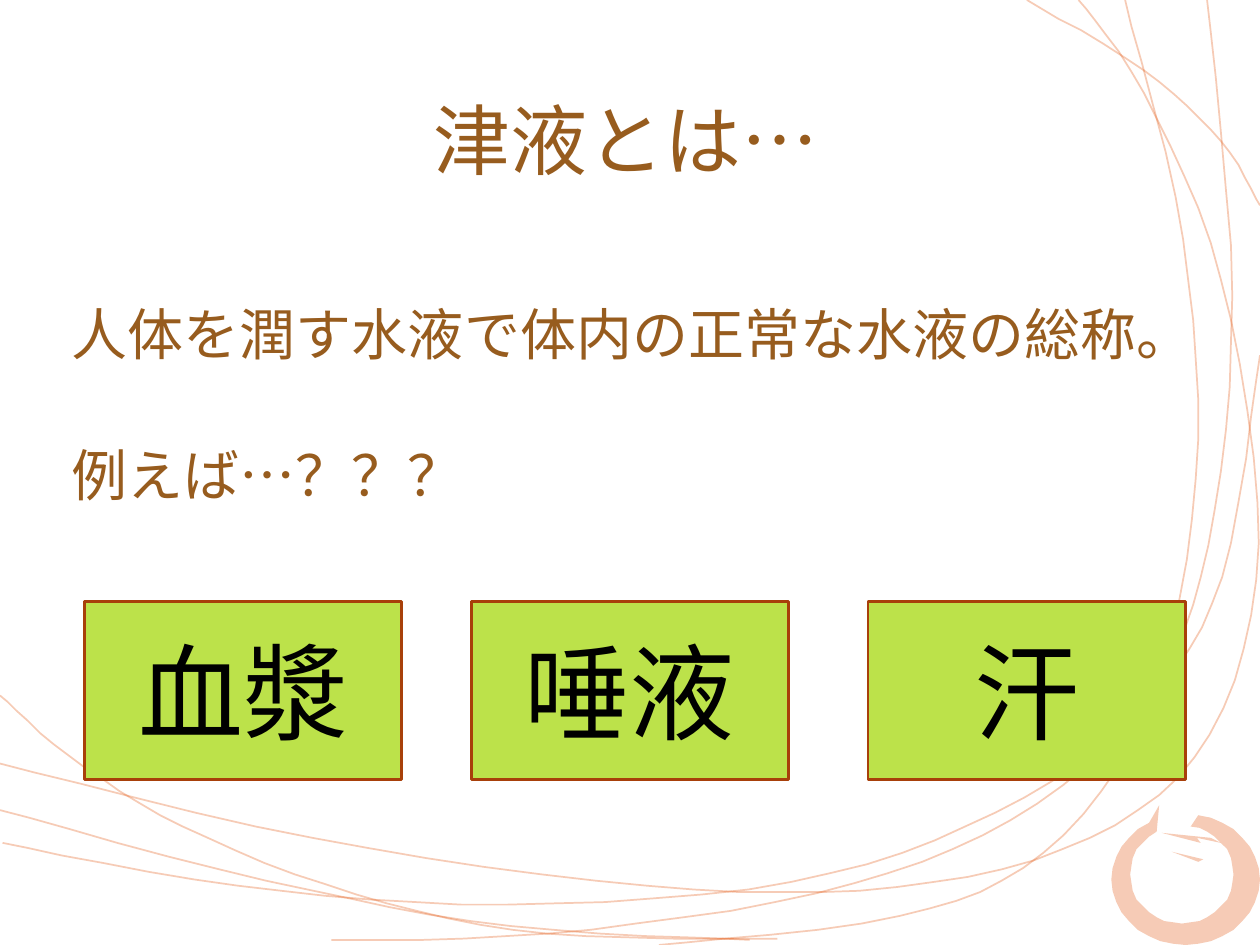
import math
from dataclasses import dataclass

from lxml import etree
from pptx import Presentation
from pptx import util as u
from pptx.dml.color import RGBColor
from pptx.enum import shapes, text
from pptx.oxml.ns import qn


@dataclass(frozen=True)
class Theme:
    font: str = "Calibri"
    brown: str = "975C1E"
    orange: str = "E3560E"
    lime: str = "BCE24A"
    rust: str = "A8400A"
    black: str = "000000"
    title_size: int = 44
    body_size: int = 32
    box_size: int = 60


THEME = Theme()
POINT_UNIT = u.Cm(2.54) / 100  # outline points are in hundredths of an inch

STRANDS = [
    [(0, 552), (55, 600), (145, 656), (283, 710), (434, 741), (617, 745)],
    [(523, 750), (714, 727), (828, 677), (911, 563), (949, 380), (939, 190), (893, 0)],
    [(0, 606), (248, 665), (514, 703), (712, 704), (865, 665), (960, 583),
     (999, 431), (969, 222), (908, 74), (856, 0)],
    [(2, 669), (189, 703), (403, 718), (628, 700), (790, 645), (908, 560),
     (970, 458), (1000, 282)],
    [(263, 746), (435, 741), (648, 709), (802, 651), (910, 555), (959, 433),
     (978, 235), (958, 0)],
    [(815, 0), (908, 56), (969, 112), (1000, 163)],
    [(0, 643), (211, 699), (405, 735), (595, 746)],
]
BRISTLES = [
    [(922, 661), (961, 665), (969, 669), (950, 665), (953, 669)],
    [(930, 676), (955, 682), (951, 684)],
]


def smooth(knots, steps=6):
    """Return points on a Catmull-Rom curve through the knots."""
    padded = [knots[0], *knots, knots[-1]]
    points = [knots[0]]
    for before, start, end, after in zip(padded, padded[1:], padded[2:], padded[3:]):
        for step in range(1, steps + 1):
            t = step / steps
            points.append(tuple(
                round((2 * b + (c - a) * t + (2 * a - 5 * b + 4 * c - d) * t ** 2
                       + (3 * b - a - 3 * c + d) * t ** 3) / 2)
                for a, b, c, d in zip(before, start, end, after)))
    return points


def arc(center_x, center_y, radius_x, radius_y):
    """Return points of the ring's sweep, from its tip to its open end."""
    angles = [math.radians(angle) for angle in range(240, -81, -10)]
    return [(round(center_x + radius_x * math.cos(angle)),
             round(center_y + radius_y * math.sin(angle))) for angle in angles]


def brush_ring():
    return [(920, 639), *arc(941, 698, 59, 52), *reversed(arc(938, 694, 41, 39))]


def set_color(fill, color, opacity=100):
    fill.solid()
    fill.fore_color.rgb = RGBColor.from_string(color)
    if opacity < 100:
        for node in fill._xPr.iter(qn("a:srgbClr")):
            etree.SubElement(node, qn("a:alpha")).set("val", str(opacity * 1000))


def add_outline(group, points, closed):
    """Draw a translucent filled shape if closed, else a thin curve."""
    builder = group.shapes.build_freeform(*points[0], scale=POINT_UNIT)
    builder.add_line_segments(points[1:], close=closed)
    outline = builder.convert_to_shape()
    outline.shadow.inherit = False
    if closed:
        set_color(outline.fill, THEME.orange, 30)
        outline.line.fill.background()
    else:
        outline.fill.background()
        outline.line.width = u.Pt(1)
        set_color(outline.line.fill, THEME.orange, 29)


def add_group(page, outlines, closed):
    group = page.shapes.add_group_shape()
    for points in outlines:
        add_outline(group, points, closed)


def write_text(shape, lines, size, color=THEME.brown, align=text.PP_ALIGN.LEFT,
               anchor=text.MSO_ANCHOR.MIDDLE, gap=0, top_inset=0.13):
    """Fill a shape with paragraphs, gap points apart."""
    frame = shape.text_frame
    frame.word_wrap = True
    frame.vertical_anchor = anchor
    frame.margin_top = u.Cm(top_inset)
    for index, line in enumerate(lines):
        para = frame.add_paragraph() if index else frame.paragraphs[0]
        para.alignment = align
        para.space_before = u.Pt(gap if index else 0)
        span = para.add_run()
        span.text = line
        span.font.name = THEME.font
        span.font.size = u.Pt(size)
        span.font.color.rgb = RGBColor.from_string(color)


def add_text(page, left, top, width, height, lines, **style):
    box = page.shapes.add_textbox(*map(u.Cm, (left, top, width, height)))
    write_text(box, lines, **style)


def add_example(page, left, word):
    box = page.shapes.add_shape(shapes.MSO_SHAPE.RECTANGLE,
                                *map(u.Cm, (left, 12.12, 6.4, 3.6)))
    box.shadow.inherit = False
    set_color(box.fill, THEME.lime)
    set_color(box.line.fill, THEME.rust)
    box.line.width = u.Pt(1.54)
    write_text(box, [word], size=THEME.box_size, color=THEME.black,
               align=text.PP_ALIGN.CENTER)


def main():
    deck = Presentation()
    deck.slide_width, deck.slide_height = u.Cm(25.4), u.Cm(19.05)
    page = deck.slides.add_slide(deck.slide_layouts[6])
    add_group(page, map(smooth, STRANDS), closed=False)
    add_group(page, [brush_ring(), *BRISTLES], closed=True)
    add_text(page, 1.2, 1.2, 22.86, 3.18, ["津液とは…"],
             size=THEME.title_size, align=text.PP_ALIGN.CENTER)
    add_text(page, 1.2, 4.5, 22.86, 13.03,
             ["人体を潤す水液で体内の正常な水液の総称。", "例えば…？？？"],
             size=THEME.body_size, anchor=text.MSO_ANCHOR.TOP, gap=42, top_inset=1.54)
    for left, word in ((1.7, "血漿"), (9.5, "唾液"), (17.5, "汗")):
        add_example(page, left, word)
    deck.save("out.pptx")


if __name__ == "__main__":
    main()
